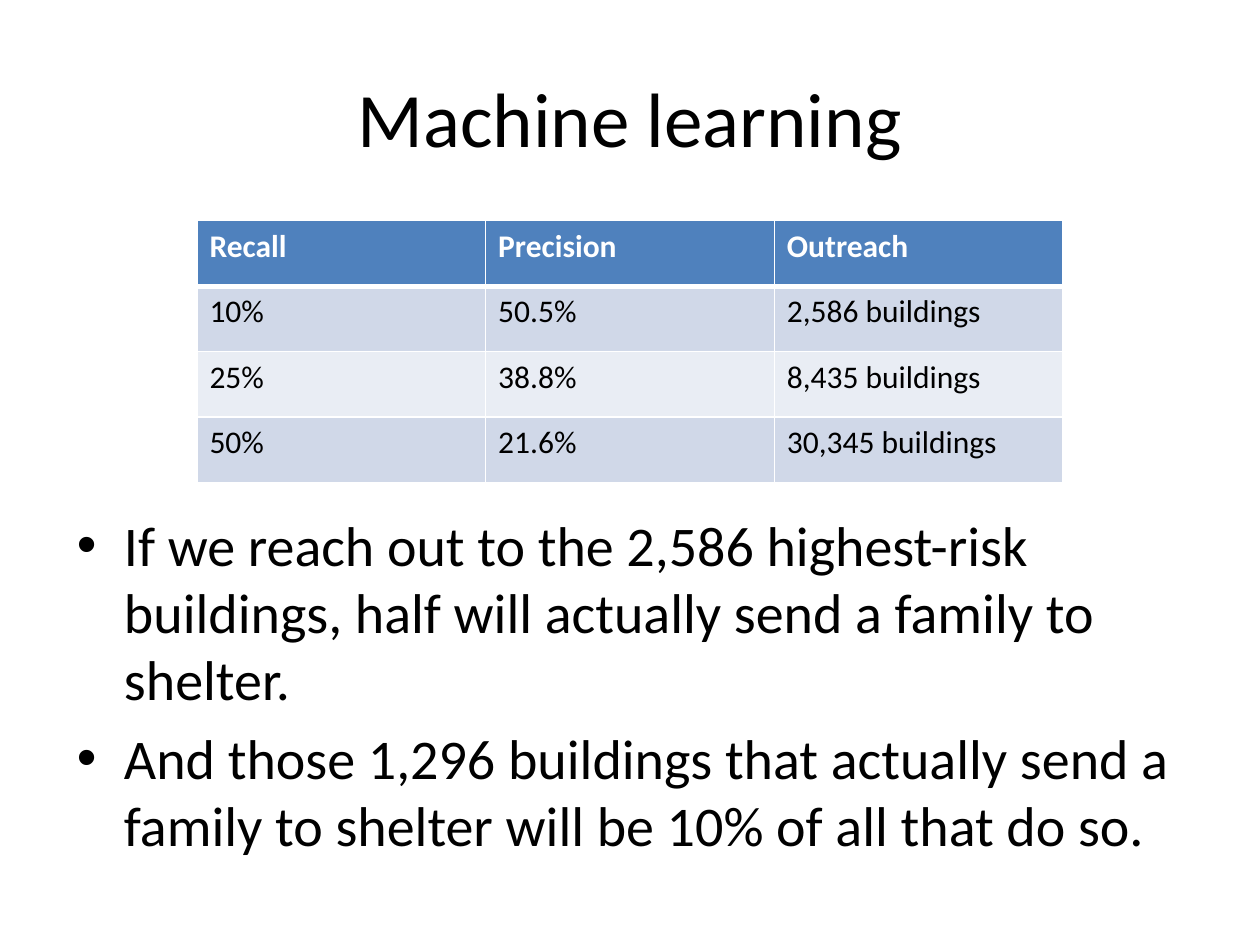
from lxml.etree import SubElement
from pptx import Presentation
from pptx.dml.color import RGBColor
from pptx.enum.text import MSO_ANCHOR, PP_ALIGN
from pptx.oxml.ns import qn
from pptx.util import Cm, Pt

# Content
TITLE = "Machine learning"
ROWS = [
    ("Recall", "Precision", "Outreach"),
    ("10%", "50.5%", "2,586 buildings"),
    ("25%", "38.8%", "8,435 buildings"),
    ("50%", "21.6%", "30,345 buildings"),
]
BULLETS = [
    "If we reach out to the 2,586 highest-risk buildings, half will actually "
    "send a family to shelter.",
    "And those 1,296 buildings that actually send a family to shelter will be "
    "10% of all that do so.",
]

# Format
FONT = "Calibri"
BLACK = RGBColor(0x00, 0x00, 0x00)
WHITE = RGBColor(0xFF, 0xFF, 0xFF)
HEADER_BLUE = RGBColor(0x4F, 0x81, 0xBD)
BANDS = (RGBColor(0xD0, 0xD8, 0xE8), RGBColor(0xE9, 0xED, 0xF4))
INDENT = Cm(0.95)


def write(paragraph, text, size, color=BLACK, bold=False, align=PP_ALIGN.LEFT):
    paragraph.alignment = align
    run = paragraph.add_run()
    run.text = text
    run.font.name = FONT
    run.font.size = Pt(size)
    run.font.bold = bold
    run.font.color.rgb = color


def add_text_frame(slide, left, top, width, height, anchor):
    frame = slide.shapes.add_textbox(Cm(left), Cm(top), Cm(width), Cm(height)).text_frame
    frame.word_wrap = True
    frame.vertical_anchor = anchor
    return frame


def add_bullet(paragraph):
    properties = paragraph._p.get_or_add_pPr()
    properties.set("marL", str(INDENT))
    properties.set("indent", str(-INDENT))
    SubElement(properties, qn("a:buFont"), typeface="Arial")
    SubElement(properties, qn("a:buChar"), char="•")


def set_borders(cell, color, widths):
    properties = cell._tc.get_or_add_tcPr()
    for position, (side, width) in enumerate(widths.items()):
        line = properties.makeelement(qn(f"a:{side}"), {"w": str(Pt(width))})
        fill = SubElement(line, qn("a:solidFill"))
        SubElement(fill, qn("a:srgbClr"), val=str(color))
        properties.insert(position, line)


presentation = Presentation()
presentation.slide_width, presentation.slide_height = Cm(25.4), Cm(19.05)
slide = presentation.slides.add_slide(presentation.slide_layouts[6])

# Title
frame = add_text_frame(slide, 1.27, 0.76, 22.86, 3.18, MSO_ANCHOR.MIDDLE)
write(frame.paragraphs[0], TITLE, 44, align=PP_ALIGN.CENTER)

# Results table
table = slide.shapes.add_table(
    len(ROWS), len(ROWS[0]), Cm(3.97), Cm(4.45), Cm(17.46), Cm(5.28)
).table
for row_index, row in enumerate(ROWS):
    is_header = row_index == 0
    for column_index, text in enumerate(row):
        cell = table.cell(row_index, column_index)
        cell.fill.solid()
        cell.fill.fore_color.rgb = HEADER_BLUE if is_header else BANDS[(row_index - 1) % 2]
        write(cell.text_frame.paragraphs[0], text, 18,
              color=WHITE if is_header else BLACK, bold=is_header)
        set_borders(cell, WHITE, {"lnL": 1, "lnR": 1,
                                  "lnT": 3 if row_index == 1 else 1,
                                  "lnB": 3 if is_header else 1})

# Conclusions
frame = add_text_frame(slide, 1.3, 10.16, 22.86, 7.82, MSO_ANCHOR.TOP)
for index, text in enumerate(BULLETS):
    paragraph = frame.add_paragraph() if index else frame.paragraphs[0]
    paragraph.space_before = Pt(6.4)
    write(paragraph, text, 32)
    add_bullet(paragraph)

presentation.save("out.pptx")
